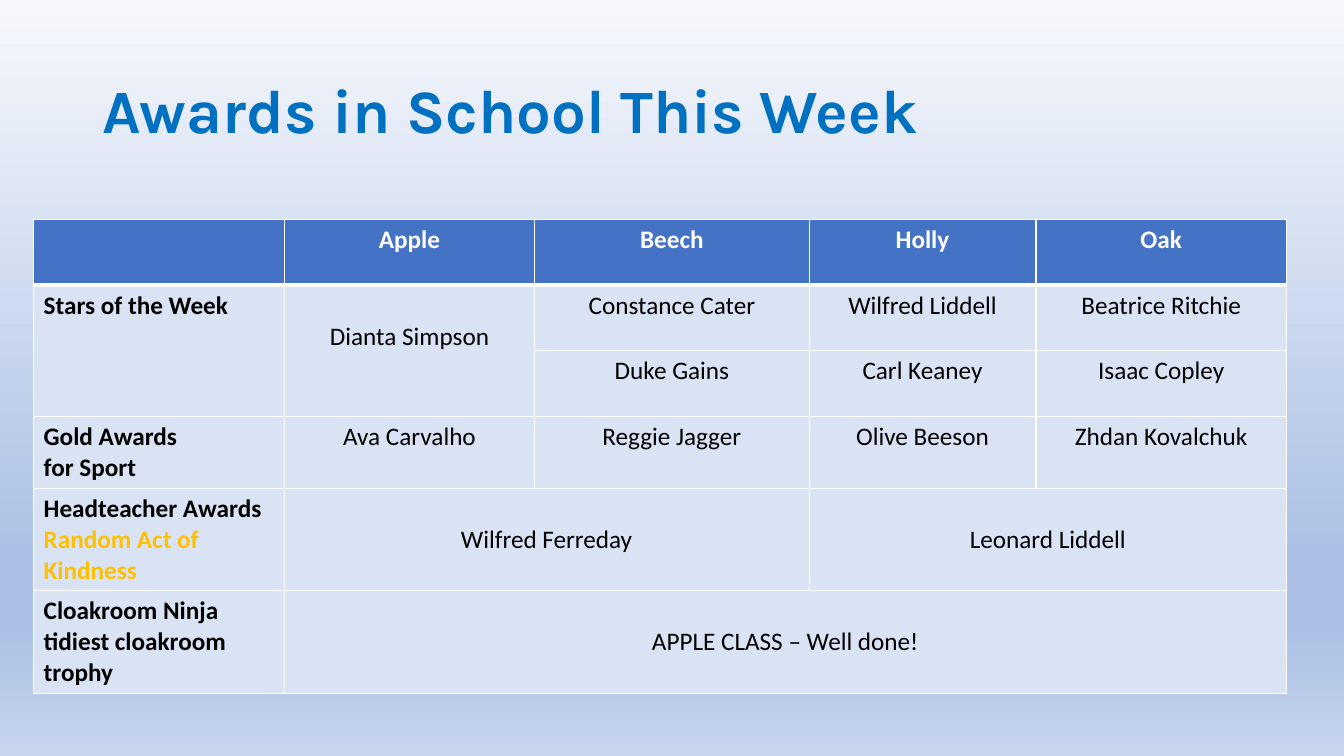
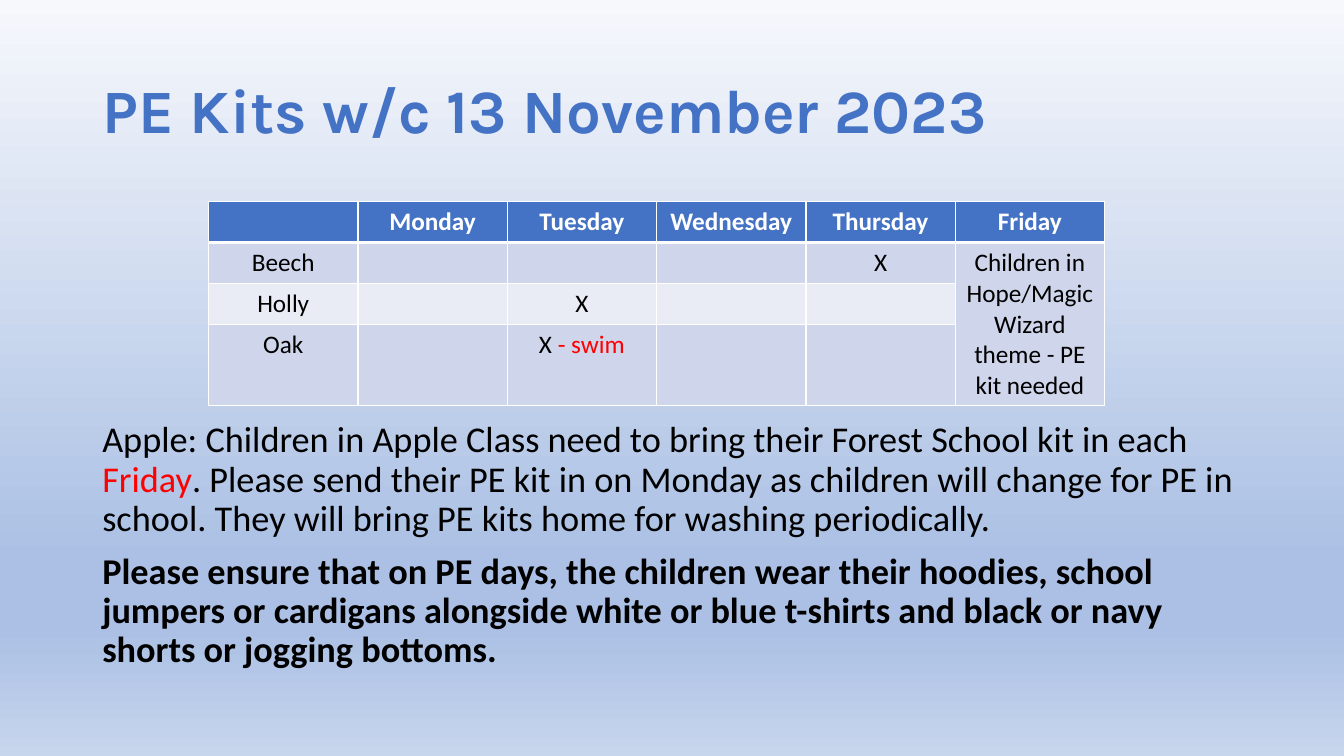
import pptx
import pptx.util
import pptx.dml.color
import pptx.enum.text
import pptx.oxml
import pptx.oxml.ns
import lxml.etree

Pt = pptx.util.Pt
ALIGN = pptx.enum.text.PP_ALIGN
ANCHOR = pptx.enum.text.MSO_ANCHOR

BLACK, WHITE, RED, GOLD = "000000", "FFFFFF", "FF0000", "FFC000"
BLUE, BRIGHT_BLUE = "4472C4", "0070C0"
PALE_BLUE, BAND_DARK, BAND_LIGHT = "DAE3F3", "CFD5EA", "E9EBF5"
BACKGROUND = [(0, "F6F8FC"), (74, "ABC0E4"), (83, "ABC0E4"), (100, "C7D5ED")]
LEFT, CONTENT_WIDTH = 66, 828

AWARDS = {
    "left": 24, "top": 157, "label_bold": True, "label_align": ALIGN.LEFT,
    "columns": [179, 179, 196, 162, 179],
    "heights": [46.8, 46.8, 46.8, 51.5, 73, 73],
    "bands": [PALE_BLUE],
    "merges": [(1, 0, 2, 0), (1, 1, 2, 1), (4, 1, 4, 2), (4, 3, 4, 4), (5, 1, 5, 4)],
    "rows": [
        ["", "Apple", "Beech", "Holly", "Oak"],
        ["Stars of the Week", "Dianta Simpson", "Constance Cater", "Wilfred Liddell", "Beatrice Ritchie"],
        ["", "", "Duke Gains", "Carl Keaney", "Isaac Copley"],
        ["Gold Awards\nfor Sport", "Ava Carvalho", "Reggie Jagger", "Olive Beeson", "Zhdan Kovalchuk"],
        [[("Headteacher Awards ", BLACK), ("Random Act of Kindness", GOLD)],
         "Wilfred Ferreday", "", "Leonard Liddell", ""],
        ["Cloakroom Ninja tidiest cloakroom trophy", "APPLE CLASS – Well done!", "", "", ""],
    ],
}

KITS = {
    "left": 149, "top": 144, "label_bold": False, "label_align": ALIGN.CENTER,
    "columns": [106.67] * 6,
    "heights": [29.2, 29.2, 29.2, 58],
    "bands": [BAND_DARK, BAND_LIGHT],
    "merges": [(1, 5, 3, 5)],
    "rows": [
        ["", "Monday", "Tuesday", "Wednesday", "Thursday", "Friday"],
        ["Beech", "", "", "", "X", "Children in Hope/Magic Wizard theme - PE kit needed"],
        ["Holly", "", "X", "", "", ""],
        ["Oak", "", [("X ", BLACK), ("- swim", RED)], "", "", ""],
    ],
}

KIT_NOTES = [
    ([("Apple: Children in Apple Class need to bring their Forest School kit in each ", BLACK),
      ("Friday", RED),
      (". Please send their PE kit in on Monday as children will change for PE in school. "
       "They will bring PE kits home for washing periodically.", BLACK)], False),
    ([("Please ensure that on PE days, the children wear their hoodies, school jumpers or cardigans "
       "alongside white or blue t-shirts and black or navy shorts or jogging bottoms.", BLACK)], True),
]


def rgb(value):
    return pptx.dml.color.RGBColor.from_string(value)


def style(font, size, color, bold, name="Calibri"):
    font.name, font.size, font.bold = name, Pt(size), bold
    font.color.rgb = rgb(color)


def add_spans(para, spans, size, bold):
    for text, color in spans:
        span = para.add_run()
        span.text = text
        style(span.font, size, color, bold)


def set_background(master):
    fill = master.background.fill
    fill.gradient()
    fill.gradient_angle = 270
    stops = master.element.find(".//" + pptx.oxml.ns.qn("a:gsLst"))
    for stop in list(stops):
        stops.remove(stop)
    for position, color in BACKGROUND:
        stop = lxml.etree.SubElement(stops, pptx.oxml.ns.qn("a:gs"), pos=str(position * 1000))
        lxml.etree.SubElement(stop, pptx.oxml.ns.qn("a:srgbClr"), val=color)


def add_titled_page(deck, text, color):
    page = deck.slides.add_slide(deck.slide_layouts[5])
    title = page.shapes.title
    title.left, title.top, title.width, title.height = Pt(LEFT), Pt(28.8), Pt(CONTENT_WIDTH), Pt(104.4)
    frame = title.text_frame
    frame.text = text
    frame.word_wrap = True
    frame.auto_size = pptx.enum.text.MSO_AUTO_SIZE.NONE
    frame.vertical_anchor = ANCHOR.MIDDLE
    para = frame.paragraphs[0]
    para.alignment, para.line_spacing = ALIGN.LEFT, 0.9
    style(para.runs[0].font, 44, color, True, "Karla")
    return page


def set_borders(cell, top, bottom):
    properties = cell._tc.get_or_add_tcPr()
    for side, width in (("L", 1), ("R", 1), ("T", top), ("B", bottom)):
        line = lxml.etree.SubElement(properties, pptx.oxml.ns.qn("a:ln" + side), w=str(Pt(width)))
        fill = lxml.etree.SubElement(line, pptx.oxml.ns.qn("a:solidFill"))
        lxml.etree.SubElement(fill, pptx.oxml.ns.qn("a:srgbClr"), val=WHITE)


def fill_cell(cell, content, fill, color, bold, align, header_edge):
    set_borders(cell, 3 if header_edge == "below" else 1, 3 if header_edge == "above" else 1)
    cell.fill.solid()
    cell.fill.fore_color.rgb = rgb(fill)
    lines = [[(text, color)] for text in content.split("\n")] if isinstance(content, str) else [content]
    for index, spans in enumerate(lines):
        para = cell.text_frame.add_paragraph() if index else cell.text_frame.paragraphs[0]
        para.alignment = align
        if content:
            add_spans(para, spans, 18, bold)
        else:
            para.font.size = Pt(18)


def add_grid(page, grid):
    rows, columns, heights = grid["rows"], grid["columns"], grid["heights"]
    table = page.shapes.add_table(len(rows), len(columns), Pt(grid["left"]), Pt(grid["top"]),
                                  Pt(sum(columns)), Pt(sum(heights))).table
    table.horz_banding = False
    for column, width in zip(table.columns, columns):
        column.width = Pt(width)
    for row, height in zip(table.rows, heights):
        row.height = Pt(height)
    for r, row in enumerate(rows):
        for c, content in enumerate(row):
            header, label = r == 0, c == 0
            fill_cell(table.cell(r, c), content,
                      BLUE if header else grid["bands"][(r - 1) % len(grid["bands"])],
                      WHITE if header else BLACK,
                      header or (label and grid["label_bold"]),
                      grid["label_align"] if label else ALIGN.CENTER,
                      {0: "above", 1: "below"}.get(r))
    for top, left, bottom, right in grid["merges"]:
        table.cell(top, left).merge(table.cell(bottom, right))
    return table


def add_notes(page, notes):
    box = page.shapes.add_textbox(Pt(LEFT), Pt(297.6), Pt(CONTENT_WIDTH), Pt(189))
    frame = box.text_frame
    frame.word_wrap = True
    for index, (spans, bold) in enumerate(notes):
        para = frame.add_paragraph() if index else frame.paragraphs[0]
        para.line_spacing = 0.9
        para.space_before = Pt(10 if index else 0)
        add_spans(para, spans, 25.9, bold)


def main():
    deck = pptx.Presentation()
    deck.slide_width, deck.slide_height = Pt(960), Pt(540)
    set_background(deck.slide_master)

    page = add_titled_page(deck, "Awards in School This Week", BRIGHT_BLUE)
    table = add_grid(page, AWARDS)
    table.cell(1, 1).margin_top = Pt(25.6)
    for row, column in ((4, 1), (4, 3), (5, 1)):
        table.cell(row, column).vertical_anchor = ANCHOR.MIDDLE

    page = add_titled_page(deck, "PE Kits w/c 13 November 2023", BLUE)
    add_notes(page, KIT_NOTES)
    add_grid(page, KITS)

    deck.save("out.pptx")


if __name__ == "__main__":
    main()
